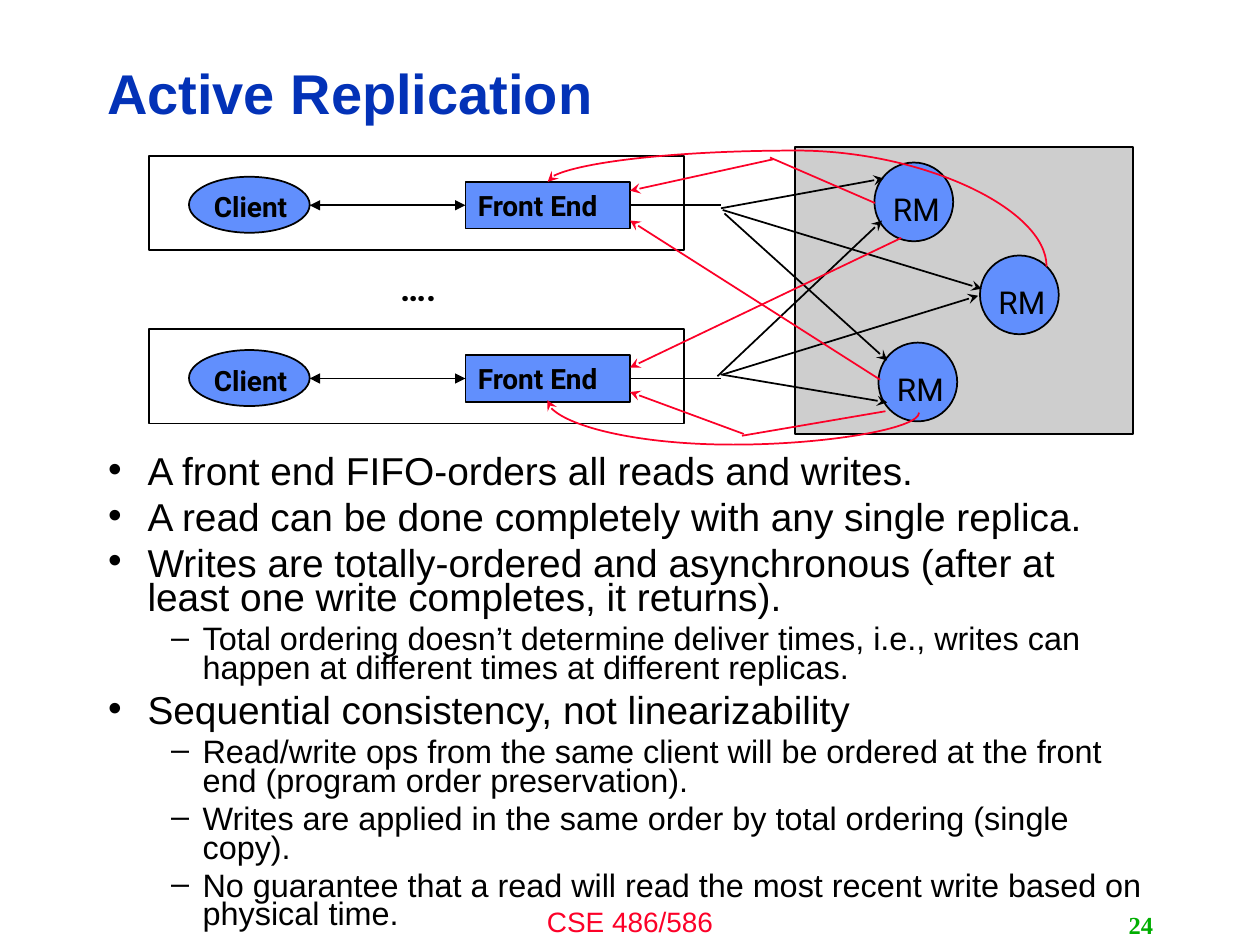
from lxml import etree
from pptx import Presentation
from pptx.dml.color import RGBColor
from pptx.enum import shapes as kinds, text as layout
from pptx.oxml.ns import qn
from pptx.util import Pt

BLACK, RED, BLUE = "000000", "FC0128", "618FFD"
LEFT, CENTER, RIGHT = layout.PP_ALIGN.LEFT, layout.PP_ALIGN.CENTER, layout.PP_ALIGN.RIGHT
RECTANGLE, OVAL = kinds.MSO_SHAPE.RECTANGLE, kinds.MSO_SHAPE.OVAL
STRAIGHT, CURVE = kinds.MSO_CONNECTOR.STRAIGHT, kinds.MSO_CONNECTOR.CURVE


def write(shape, content, size, font, color=BLACK, bold=False, align=LEFT):
    """Put one line of text in a shape and return its paragraph."""
    shape.text_frame.word_wrap = True
    paragraph = shape.text_frame.paragraphs[0]
    paragraph.alignment = align
    run = paragraph.add_run()
    run.text = content
    run.font.size, run.font.name, run.font.bold = Pt(size), font, bold
    run.font.color.rgb = RGBColor.from_string(color)
    return paragraph


def style(shape, line=BLACK, fill=None, head=None, tail=None):
    """Outline a shape or connector, without shadow, and add fill or arrowheads."""
    shape.line.color.rgb = RGBColor.from_string(line)
    shape.line.width = Pt(1)
    if isinstance(shape, type(slide.shapes[0])) or hasattr(shape, "fill"):
        shape.shadow.inherit = False
        if fill:
            shape.fill.solid()
            shape.fill.fore_color.rgb = RGBColor.from_string(fill)
        else:
            shape.fill.background()
        return
    outline = shape.line._get_or_add_ln()
    for tag, kind in (("a:headEnd", head), ("a:tailEnd", tail)):
        if kind:
            etree.SubElement(outline, qn(tag), type=kind)
    etree.SubElement(shape._element.spPr, qn("a:effectLst"))


presentation = Presentation()
presentation.slide_width, presentation.slide_height = Pt(720), Pt(540)
slide = presentation.slides.add_slide(presentation.slide_layouts[5])

title = slide.shapes.title
title.left, title.top, title.width, title.height = Pt(54), Pt(26), Pt(574.5), Pt(58)
title.text_frame.vertical_anchor = layout.MSO_ANCHOR.MIDDLE
write(title, "Active Replication", 32, "Arial", "0332B7", True).line_spacing = 0.9

# Body: level, text
points = [
    (0, "A front end FIFO-orders all reads and writes."),
    (0, "A read can be done completely with any single replica."),
    (0, "Writes are totally-ordered and asynchronous (after at least one write completes, it returns)."),
    (1, "Total ordering doesn’t determine deliver times, i.e., writes can happen at different times at different replicas."),
    (0, "Sequential consistency, not linearizability"),
    (1, "Read/write ops from the same client will be ordered at the front end (program order preservation)."),
    (1, "Writes are applied in the same order by total ordering (single copy)."),
    (1, "No guarantee that a read will read the most recent write based on physical time."),
]
# Per level: size, space before, left margin, indent, bullet
levels = [(22.2, 6.5, 22.5, -22.5, "•"), (18.5, 5.3, 54, -18, "–")]
body = slide.shapes.add_textbox(Pt(54.7), Pt(258), Pt(605), Pt(282))
body.text_frame.word_wrap = True
for index, (level, content) in enumerate(points):
    size, before, margin, indent, bullet = levels[level]
    paragraph = body.text_frame.paragraphs[0] if index == 0 else body.text_frame.add_paragraph()
    paragraph.level = level
    paragraph.line_spacing = 0.74
    paragraph.space_before = Pt(before)
    properties = paragraph._p.get_or_add_pPr()
    properties.set("marL", str(Pt(margin)))
    properties.set("indent", str(Pt(indent)))
    etree.SubElement(properties, qn("a:buFont"), typeface="Arial")
    etree.SubElement(properties, qn("a:buChar"), char=bullet)
    run = paragraph.add_run()
    run.text = content
    run.font.size, run.font.name = Pt(size), "Arial"
    run.font.color.rgb = RGBColor.from_string(BLACK)

footer = slide.shapes.add_textbox(Pt(240), Pt(513.5), Pt(240), Pt(26.5))
write(footer, "CSE 486/586", 16, "Arial", RED, align=CENTER)
number = slide.shapes.add_textbox(Pt(516), Pt(517), Pt(150), Pt(23))
number.text_frame.vertical_anchor = layout.MSO_ANCHOR.MIDDLE
write(number, "24", 14, "Times New Roman", "00AE00", True, RIGHT)

replicas = slide.shapes.add_shape(RECTANGLE, Pt(454.3), Pt(84), Pt(193), Pt(164.2))
style(replicas, fill="CECECE")

# Client rows, each with a front end and a short line leaving it
for top in (89, 188):
    row = slide.shapes.add_shape(RECTANGLE, Pt(85), Pt(top), Pt(306), Pt(54))
    style(row)
    client = slide.shapes.add_shape(OVAL, Pt(108), Pt(top + 12), Pt(69), Pt(32))
    style(client, fill=BLUE)
    label = slide.shapes.add_textbox(Pt(108.7), Pt(top + 16), Pt(69), Pt(26.6))
    write(label, "Client", 16, "Roboto", bold=True, align=CENTER)
    front_end = slide.shapes.add_shape(RECTANGLE, Pt(266), Pt(top + 15), Pt(94), Pt(26.6))
    style(front_end, fill=BLUE)
    write(front_end, "Front End", 16, "Roboto", bold=True)
    middle = Pt(top + 28.3)
    request = slide.shapes.add_connector(STRAIGHT, Pt(177), middle, Pt(266), middle)
    request.end_connect(front_end, 1)
    style(request, head="triangle", tail="triangle")
    stub = slide.shapes.add_connector(STRAIGHT, Pt(360), middle, Pt(412), middle)
    stub.begin_connect(front_end, 3)
    style(stub)

dots = slide.shapes.add_textbox(Pt(187), Pt(149), Pt(104), Pt(31.5))
write(dots, "….", 20, "Roboto", bold=True, align=CENTER)

for left, top in ((499.7, 92.9), (560, 146), (502, 195.8)):
    replica = slide.shapes.add_shape(OVAL, Pt(left), Pt(top), Pt(45), Pt(45))
    style(replica, fill=BLUE)
    label = slide.shapes.add_textbox(Pt(left - 2.5), Pt(top + 12), Pt(53), Pt(26.6))
    write(label, "RM", 18, "Roboto", align=CENTER)

# Straight lines: from x, y, to x, y, colour, arrowhead
for x1, y1, x2, y2, color, arrow in (
    (412, 119, 505, 102, BLACK, "stealth"),
    (413, 120, 561, 165, BLACK, "stealth"),
    (414, 122, 507, 206, BLACK, "stealth"),
    (410, 215, 504, 126, BLACK, "stealth"),
    (412, 214, 507, 230, BLACK, "stealth"),
    (413, 214, 559, 169, BLACK, "stealth"),
    (500, 116, 440, 90, RED, None),
    (442, 91, 360, 109, RED, "stealth"),
    (503, 217, 360, 126, RED, "stealth"),
    (506, 235, 424, 249, RED, None),
    (425, 248, 360, 224, RED, "stealth"),
    (515, 136, 360, 210, RED, "stealth"),
):
    line = slide.shapes.add_connector(STRAIGHT, Pt(x1), Pt(y1), Pt(x2), Pt(y2))
    style(line, color, tail=arrow)

# Curved replies, given before turning: from x, y, to x, y, degrees, bend
for x1, y1, x2, y2, degrees, bend in (
    (431.3, 270.7, 479.7, -14.4, 270, 137000),
    (422.6, 126, 415.4, 338.4, 90, -253800),
):
    reply = slide.shapes.add_connector(CURVE, Pt(x1), Pt(y1), Pt(x2), Pt(y2))
    properties = reply._element.spPr
    properties.find(qn("a:xfrm")).set("rot", str(degrees * 60000))
    adjustments = properties.find(qn("a:prstGeom")).find(qn("a:avLst"))
    etree.SubElement(adjustments, qn("a:gd"), name="adj1", fmla=f"val {bend}")
    style(reply, RED, tail="stealth")

presentation.save("out.pptx")
